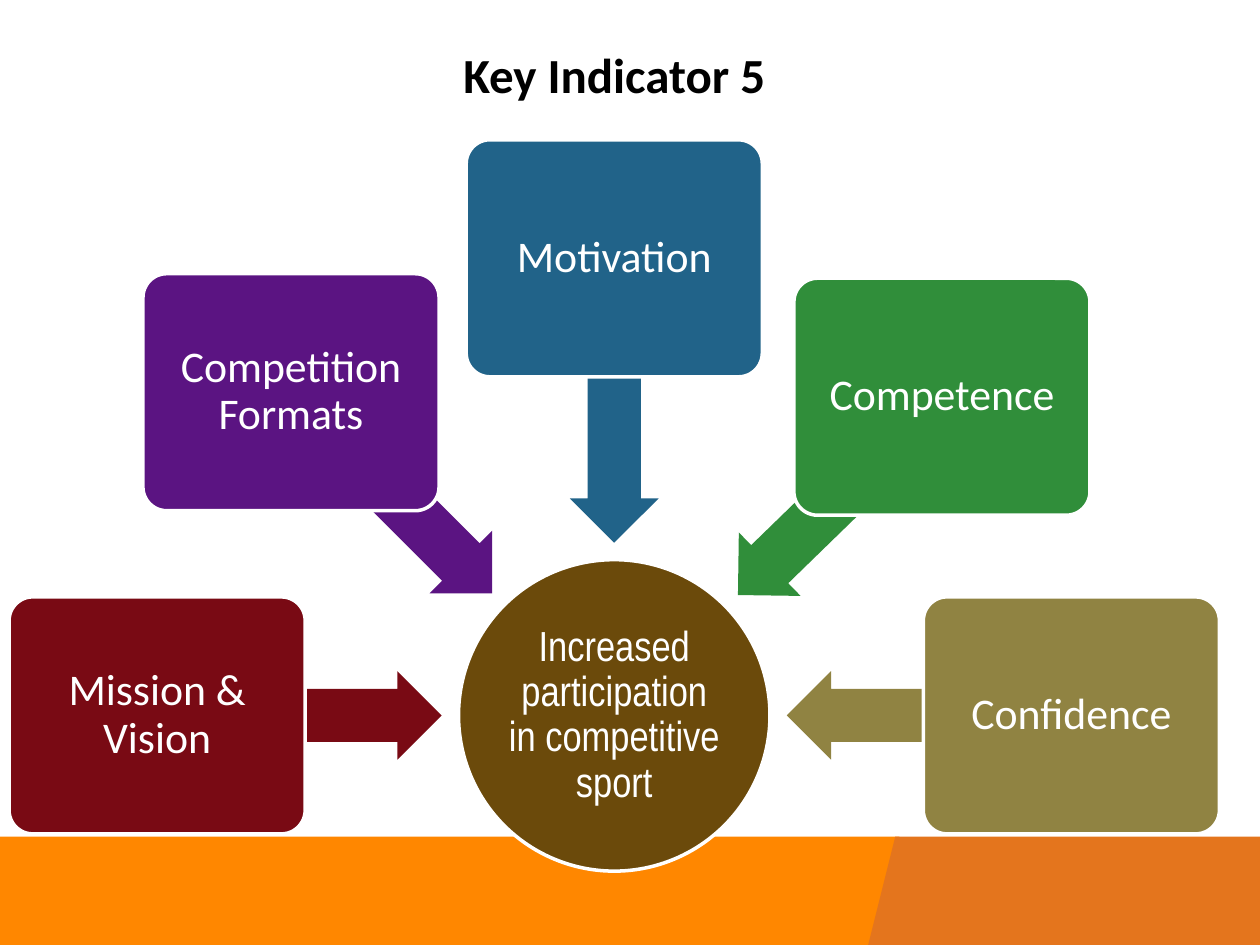
from dataclasses import dataclass
from math import cos, radians, sin

from pptx import Presentation
from pptx.dml.color import RGBColor
from pptx.enum import shapes, text
from pptx.util import Pt

WHITE = RGBColor(0xFF, 0xFF, 0xFF)
BLACK = RGBColor(0x00, 0x00, 0x00)
BROWN = RGBColor(0x6B, 0x4A, 0x0B)
MAROON = RGBColor(0x79, 0x0A, 0x14)
PURPLE = RGBColor(0x5B, 0x14, 0x82)
BLUE = RGBColor(0x21, 0x63, 0x89)
GREEN = RGBColor(0x30, 0x8E, 0x3A)
OLIVE = RGBColor(0x90, 0x83, 0x42)
ORANGE = RGBColor(0xFF, 0x87, 0x00)
DARK_ORANGE = RGBColor(0xE4, 0x75, 0x1D)

HUB_X, HUB_Y = 351, 408.8
HUB_SIZE = 178
CARD_WIDTH, CARD_HEIGHT = 169.2, 135.4
ARROW_WIDTH, ARROW_HEIGHT = 162.7, 50.6
CARD_RADIUS, ARROW_RADIUS = 261.2, 180
BAND_TOP, BAND_HEIGHT = 478.1, 64.8


@dataclass(frozen=True)
class Factor:
    label: str
    angle: float
    color: RGBColor


@dataclass(frozen=True)
class Band:
    left: float
    width: float
    color: RGBColor


FACTORS = [
    Factor("Mission & Vision", 180, MAROON),
    Factor("Competition Formats", 225, PURPLE),
    Factor("Motivation", 270, BLUE),
    Factor("Competence", 315.8, GREEN),
    Factor("Confidence", 0, OLIVE),
]
BANDS = [Band(-18, 532, ORANGE), Band(495.4, 244, DARK_ORANGE)]


def add_filled(page, kind, left: float, top: float, width: float, height: float,
               color: RGBColor, outlined: bool = False):
    shape = page.shapes.add_shape(kind, Pt(left), Pt(top), Pt(width), Pt(height))
    shape.shadow.inherit = False
    shape.fill.solid()
    shape.fill.fore_color.rgb = color
    if outlined:
        shape.line.color.rgb = WHITE
        shape.line.width = Pt(2)
    else:
        shape.line.fill.background()
    return shape


def add_radial(page, kind, angle: float, radius: float, width: float, height: float,
               color: RGBColor, outlined: bool = False):
    center_x = HUB_X + radius * cos(radians(angle))
    center_y = HUB_Y + radius * sin(radians(angle))
    return add_filled(page, kind, center_x - width / 2, center_y - height / 2,
                      width, height, color, outlined)


def write_label(shape, label: str, font_name: str, size: float, inset: float) -> None:
    frame = shape.text_frame
    frame.word_wrap = True
    frame.vertical_anchor = text.MSO_ANCHOR.MIDDLE
    frame.margin_left = frame.margin_right = Pt(inset)
    frame.margin_top = frame.margin_bottom = Pt(inset)
    para = frame.paragraphs[0]
    para.text = label
    para.alignment = text.PP_ALIGN.CENTER
    para.line_spacing = 0.9
    para.font.name = font_name
    para.font.size = Pt(size)
    para.font.color.rgb = WHITE


def add_title(page, label: str) -> None:
    title = page.shapes.title
    title.left, title.top, title.width, title.height = Pt(98), Pt(21.6), Pt(506), Pt(41)
    title.text_frame.vertical_anchor = text.MSO_ANCHOR.MIDDLE
    para = title.text_frame.paragraphs[0]
    para.text = label
    para.alignment = text.PP_ALIGN.CENTER
    para.font.name = "Calibri"
    para.font.size = Pt(28)
    para.font.bold = True
    para.font.color.rgb = BLACK


def add_hub(page, label: str) -> None:
    hub = add_radial(page, shapes.MSO_SHAPE.OVAL, 0, 0, HUB_SIZE, HUB_SIZE, BROWN, True)
    write_label(hub, label, "Arial Narrow", 24, 1.2)


def add_factor(page, factor: Factor) -> None:
    arrow = add_radial(page, shapes.MSO_SHAPE.LEFT_ARROW, factor.angle, ARROW_RADIUS,
                       ARROW_WIDTH, ARROW_HEIGHT, factor.color)
    arrow.adjustments[0] = 0.6
    arrow.adjustments[1] = 0.5
    arrow.rotation = factor.angle
    card = add_radial(page, shapes.MSO_SHAPE.ROUNDED_RECTANGLE, factor.angle, CARD_RADIUS,
                      CARD_WIDTH, CARD_HEIGHT, factor.color, True)
    card.adjustments[0] = 0.1
    write_label(card, factor.label, "Calibri", 25, 3.8)


def main() -> None:
    deck = Presentation()
    deck.slide_width, deck.slide_height = Pt(720), Pt(540)
    page = deck.slides.add_slide(deck.slide_layouts[5])
    for band in BANDS:
        add_filled(page, shapes.MSO_SHAPE.PARALLELOGRAM, band.left, BAND_TOP,
                   band.width, BAND_HEIGHT, band.color)
    add_title(page, "Key Indicator 5")
    add_hub(page, "Increased participation in competitive sport")
    for factor in FACTORS:
        add_factor(page, factor)
    deck.save("out.pptx")


if __name__ == "__main__":
    main()
